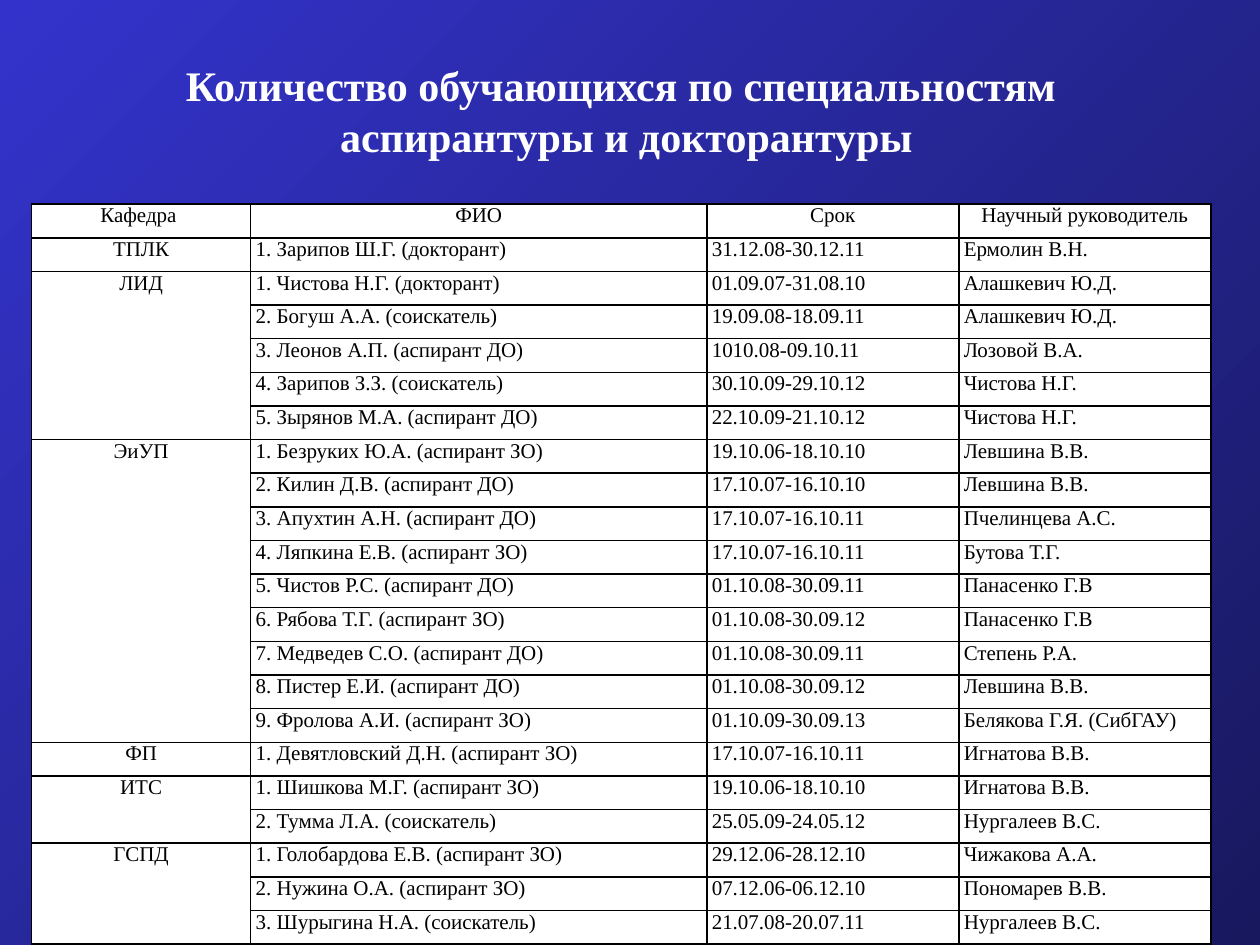
from lxml import etree
from pptx import Presentation
from pptx import util as u
from pptx.dml.color import RGBColor
from pptx.enum import text
from pptx.oxml import ns

COLORS = {
    "background_start": "3333CC",
    "background_end": "18185E",
    "title": "FFFFFF",
    "cell": "FFFFFF",
    "ink": "000000",
}
FONT = "Times New Roman"
HEADERS = ["Кафедра ", "ФИО", "Срок", "Научный руководитель"]
COLUMN_WIDTHS = [1.74, 3.62, 2, 2]
TABLE_HEIGHT = 5.88
DEPARTMENTS = {
    "ТПЛК": [
        ("Зарипов Ш.Г. (докторант)", "31.12.08-30.12.11", "Ермолин В.Н."),
    ],
    "ЛИД": [
        ("Чистова Н.Г. (докторант)", "01.09.07-31.08.10", "Алашкевич Ю.Д."),
        ("Богуш А.А. (соискатель)", "19.09.08-18.09.11", "Алашкевич Ю.Д."),
        ("Леонов А.П. (аспирант ДО)", "1010.08-09.10.11", "Лозовой В.А."),
        ("Зарипов З.З. (соискатель)", "30.10.09-29.10.12", "Чистова Н.Г."),
        ("Зырянов М.А. (аспирант ДО)", "22.10.09-21.10.12", "Чистова Н.Г."),
    ],
    "ЭиУП": [
        ("Безруких Ю.А. (аспирант ЗО)", "19.10.06-18.10.10", "Левшина В.В."),
        ("Килин Д.В. (аспирант ДО)", "17.10.07-16.10.10", "Левшина В.В."),
        ("Апухтин А.Н. (аспирант ДО)", "17.10.07-16.10.11", "Пчелинцева А.С."),
        ("Ляпкина Е.В. (аспирант ЗО)", "17.10.07-16.10.11", "Бутова Т.Г."),
        ("Чистов Р.С. (аспирант ДО)", "01.10.08-30.09.11", "Панасенко Г.В"),
        ("Рябова Т.Г. (аспирант ЗО)", "01.10.08-30.09.12", "Панасенко Г.В"),
        ("Медведев С.О. (аспирант ДО)", "01.10.08-30.09.11", "Степень Р.А."),
        ("Пистер Е.И. (аспирант ДО)", "01.10.08-30.09.12", "Левшина В.В."),
        ("Фролова А.И. (аспирант ЗО)", "01.10.09-30.09.13", "Белякова Г.Я. (СибГАУ)"),
    ],
    "ФП": [
        ("Девятловский Д.Н. (аспирант ЗО)", "17.10.07-16.10.11", "Игнатова В.В."),
    ],
    "ИТС": [
        ("Шишкова М.Г. (аспирант ЗО)", "19.10.06-18.10.10", "Игнатова В.В."),
        ("Тумма Л.А. (соискатель)", "25.05.09-24.05.12", "Нургалеев В.С."),
    ],
    "ГСПД": [
        ("Голобардова Е.В. (аспирант ЗО)", "29.12.06-28.12.10", "Чижакова А.А."),
        ("Нужина О.А. (аспирант ЗО)", "07.12.06-06.12.10", "Пономарев В.В."),
        ("Шурыгина Н.А. (соискатель)", "21.07.08-20.07.11", "Нургалеев В.С."),
    ],
}


def format_paragraph(paragraph, size, color, alignment, bold=False):
    paragraph.alignment = alignment
    paragraph.font.name = FONT
    paragraph.font.size = u.Pt(size)
    paragraph.font.bold = bold
    paragraph.font.color.rgb = RGBColor.from_string(COLORS[color])


def add_borders(cell):
    """Draw a thin line on all four sides; borders must precede the fill."""
    properties = cell._tc.get_or_add_tcPr()
    for index, side in enumerate(("lnL", "lnR", "lnT", "lnB")):
        line = etree.Element(ns.qn(f"a:{side}"), w=str(u.Pt(1)))
        fill = etree.SubElement(line, ns.qn("a:solidFill"))
        etree.SubElement(fill, ns.qn("a:srgbClr"), val=COLORS["ink"])
        properties.insert(index, line)


presentation = Presentation()
presentation.slide_width = u.Inches(10)
presentation.slide_height = u.Inches(7.5)
slide = presentation.slides.add_slide(presentation.slide_layouts[6])

background = slide.background.fill
background.gradient()
background.gradient_angle = 315  # counter-clockwise: top left to bottom right
for stop, position, name in zip(
    background.gradient_stops, (0, 1), ("background_start", "background_end")
):
    stop.position = position
    stop.color.rgb = RGBColor.from_string(COLORS[name])

title = slide.shapes.add_textbox(
    u.Inches(0.72), u.Inches(0.25), u.Inches(8.5), u.Inches(1.25)
)
title.text_frame.word_wrap = True
title.text_frame.vertical_anchor = text.MSO_ANCHOR.MIDDLE
paragraph = title.text_frame.paragraphs[0]
paragraph.text = "Количество обучающихся по специальностям \vаспирантуры и докторантуры"
format_paragraph(paragraph, 24, "title", text.PP_ALIGN.CENTER, bold=True)

rows = [HEADERS]
for department, people in DEPARTMENTS.items():
    for number, (person, term, supervisor) in enumerate(people, 1):
        label = department if number == 1 else ""
        rows.append([label, f"{number}. {person}", term, supervisor])

table = slide.shapes.add_table(
    len(rows), len(HEADERS), u.Inches(0.25), u.Inches(1.62),
    u.Inches(sum(COLUMN_WIDTHS)), u.Inches(TABLE_HEIGHT),
).table
table.first_row = False
table.horz_banding = False
for column, width in zip(table.columns, COLUMN_WIDTHS):
    column.width = u.Inches(width)

center, justify, left = text.PP_ALIGN.CENTER, text.PP_ALIGN.JUSTIFY, text.PP_ALIGN.LEFT
for row_index, row in enumerate(rows):
    alignments = [center, justify, justify, left] if row_index else [center] * 4
    for column_index, value in enumerate(row):
        cell = table.cell(row_index, column_index)
        cell.margin_left = cell.margin_right = u.Inches(0.04)
        cell.margin_top = cell.margin_bottom = 0
        cell.fill.solid()
        cell.fill.fore_color.rgb = RGBColor.from_string(COLORS["cell"])
        add_borders(cell)
        paragraph = cell.text_frame.paragraphs[0]
        paragraph.text = value
        format_paragraph(paragraph, 12, "ink", alignments[column_index])

first = 1
for people in DEPARTMENTS.values():
    last = first + len(people) - 1
    if last > first:
        table.cell(first, 0).merge(table.cell(last, 0))
    first = last + 1

presentation.save("out.pptx")
